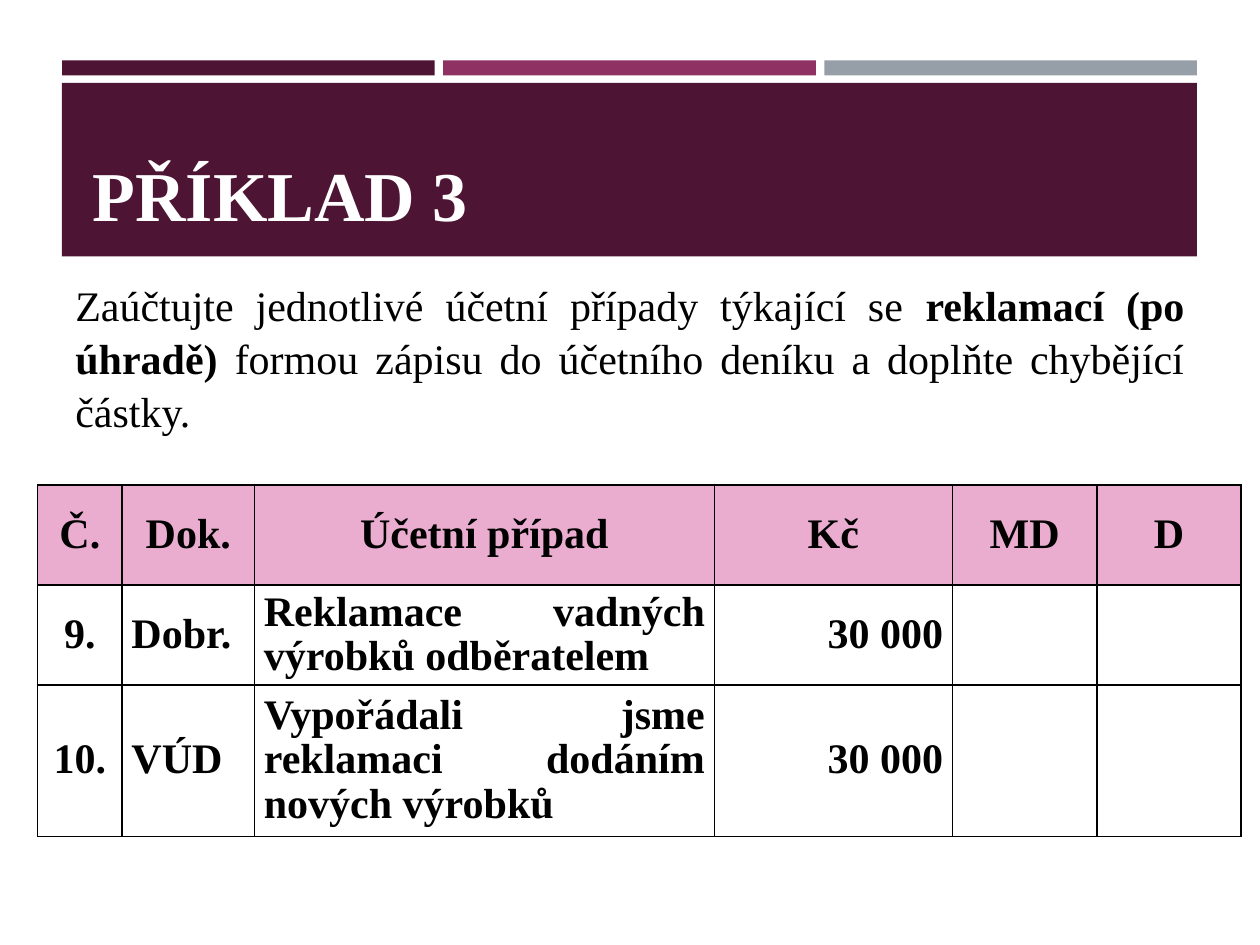
from dataclasses import dataclass

from lxml import etree
from pptx import Presentation
from pptx.dml.color import RGBColor
from pptx.enum import shapes, text
from pptx.oxml import ns
from pptx.util import Cm, Pt


@dataclass(frozen=True)
class Theme:
    """Colours, font and type sizes of the slide."""
    plum: str = "4D1434"
    berry: str = "903163"
    grey: str = "969FA7"
    pink: str = "EAADCF"
    white: str = "FFFFFF"
    black: str = "000000"
    font: str = "Times New Roman"
    title: int = 40
    body: int = 24


THEME = Theme()
ALIGN = text.PP_ALIGN
ROWS = [
    ("Č.", "Dok.", "Účetní případ", "Kč", "MD", "D"),
    ("9.", "Dobr.", "Reklamace vadných výrobků odběratelem", "30 000", "", ""),
    ("10.", "VÚD", "Vypořádali jsme reklamaci dodáním nových výrobků", "30 000", "", ""),
]
COLUMN_WIDTHS = [1.7, 2.67, 9.27, 4.8, 2.91, 2.91]
ROW_HEIGHTS = [2.01, 2.02, 3.05]
COLUMN_ALIGN = [ALIGN.CENTER, ALIGN.LEFT, ALIGN.JUSTIFY, ALIGN.RIGHT, ALIGN.CENTER, ALIGN.CENTER]
INTRO = [
    ("Zaúčtujte jednotlivé účetní případy týkající se ", False),
    ("reklamací (po úhradě) ", True),
    ("formou zápisu do účetního deníku a doplňte chybějící částky.", False),
]


def style_font(font, size, color, bold=None):
    """Apply the theme font with the given size, colour and weight."""
    font.name, font.size, font.bold = THEME.font, Pt(size), bold
    font.color.rgb = RGBColor.from_string(color)


def add_block(s, left, top, width, height, color):
    """Add a plain filled rectangle."""
    sp = s.shapes.add_shape(shapes.MSO_SHAPE.RECTANGLE, Cm(left), Cm(top), Cm(width), Cm(height))
    sp.shadow.inherit = False
    sp.fill.solid()
    sp.fill.fore_color.rgb = RGBColor.from_string(color)
    sp.line.fill.background()


def add_text_frame(s, left, top, width, height, anchor):
    """Add a wrapping text box and return its text frame."""
    tf = s.shapes.add_textbox(Cm(left), Cm(top), Cm(width), Cm(height)).text_frame
    tf.word_wrap = True
    tf.vertical_anchor = anchor
    return tf


def add_header(s, left, top, width, height):
    """Draw three accent bars above a title band."""
    gap, bar_height, band_offset = 0.17, 0.3, 0.45
    colors = [THEME.plum, THEME.berry, THEME.grey]
    bar_width = (width - gap * (len(colors) - 1)) / len(colors)
    for i, color in enumerate(colors):
        add_block(s, left + i * (bar_width + gap), top, bar_width, bar_height, color)
    add_block(s, left, top + band_offset, width, height - band_offset, THEME.plum)
    tf = add_text_frame(s, left + 0.37, top + 0.69, width - 0.69, height - 0.98,
                        text.MSO_ANCHOR.BOTTOM)
    p = tf.paragraphs[0]
    p.text = "PŘÍKLAD 3"
    style_font(p.font, THEME.title, THEME.white, True)


def add_intro(s, left, top, width, height):
    """Write the justified task description."""
    p = add_text_frame(s, left, top, width, height, text.MSO_ANCHOR.TOP).paragraphs[0]
    p.alignment, p.line_spacing = ALIGN.JUSTIFY, 1.05
    style_font(p.font, THEME.body, THEME.black)
    for wording, bold in INTRO:
        r = p.add_run()
        r.text = wording
        r.font.bold = bold


def add_borders(cell):
    """Give a cell thin black lines on all four sides."""
    tc_pr = cell._tc.get_or_add_tcPr()
    for side in ("lnL", "lnR", "lnT", "lnB"):
        line = etree.SubElement(tc_pr, ns.qn(f"a:{side}"), w=str(Pt(1)))
        fill = etree.SubElement(line, ns.qn("a:solidFill"))
        etree.SubElement(fill, ns.qn("a:srgbClr"), val=THEME.black)


def fill_cell(cell, wording, align, header):
    """Write and format one journal cell."""
    add_borders(cell)
    if header:
        cell.fill.solid()
        cell.fill.fore_color.rgb = RGBColor.from_string(THEME.pink)
    else:
        cell.fill.background()
    cell.margin_left = cell.margin_right = Cm(0.19)
    cell.margin_top = cell.margin_bottom = 0
    cell.vertical_anchor = text.MSO_ANCHOR.MIDDLE
    p = cell.text_frame.paragraphs[0]
    p.text = wording
    p.alignment, p.line_spacing = align, 0.95
    style_font(p.font, THEME.body, THEME.black, True)


def add_journal(s, left, top, width, height):
    """Build the accounting journal table."""
    table = s.shapes.add_table(len(ROWS), len(COLUMN_WIDTHS), Cm(left), Cm(top),
                               Cm(width), Cm(height)).table
    for column, size in zip(table.columns, COLUMN_WIDTHS):
        column.width = Cm(size)
    for row, size in zip(table.rows, ROW_HEIGHTS):
        row.height = Cm(size)
    for i, row in enumerate(ROWS):
        for j, wording in enumerate(row):
            align = ALIGN.CENTER if i == 0 else COLUMN_ALIGN[j]
            fill_cell(table.cell(i, j), wording, align, i == 0)


def main():
    """Build and save the slide."""
    prs = Presentation()
    prs.slide_width, prs.slide_height = Cm(25.4), Cm(19.05)
    s = prs.slides.add_slide(prs.slide_layouts[6])
    add_header(s, 1.25, 1.22, 22.88, 3.95)
    add_intro(s, 1.27, 5.46, 22.86, 3.33)
    add_journal(s, 0.76, 9.78, sum(COLUMN_WIDTHS), sum(ROW_HEIGHTS))
    prs.save("out.pptx")


if __name__ == "__main__":
    main()
